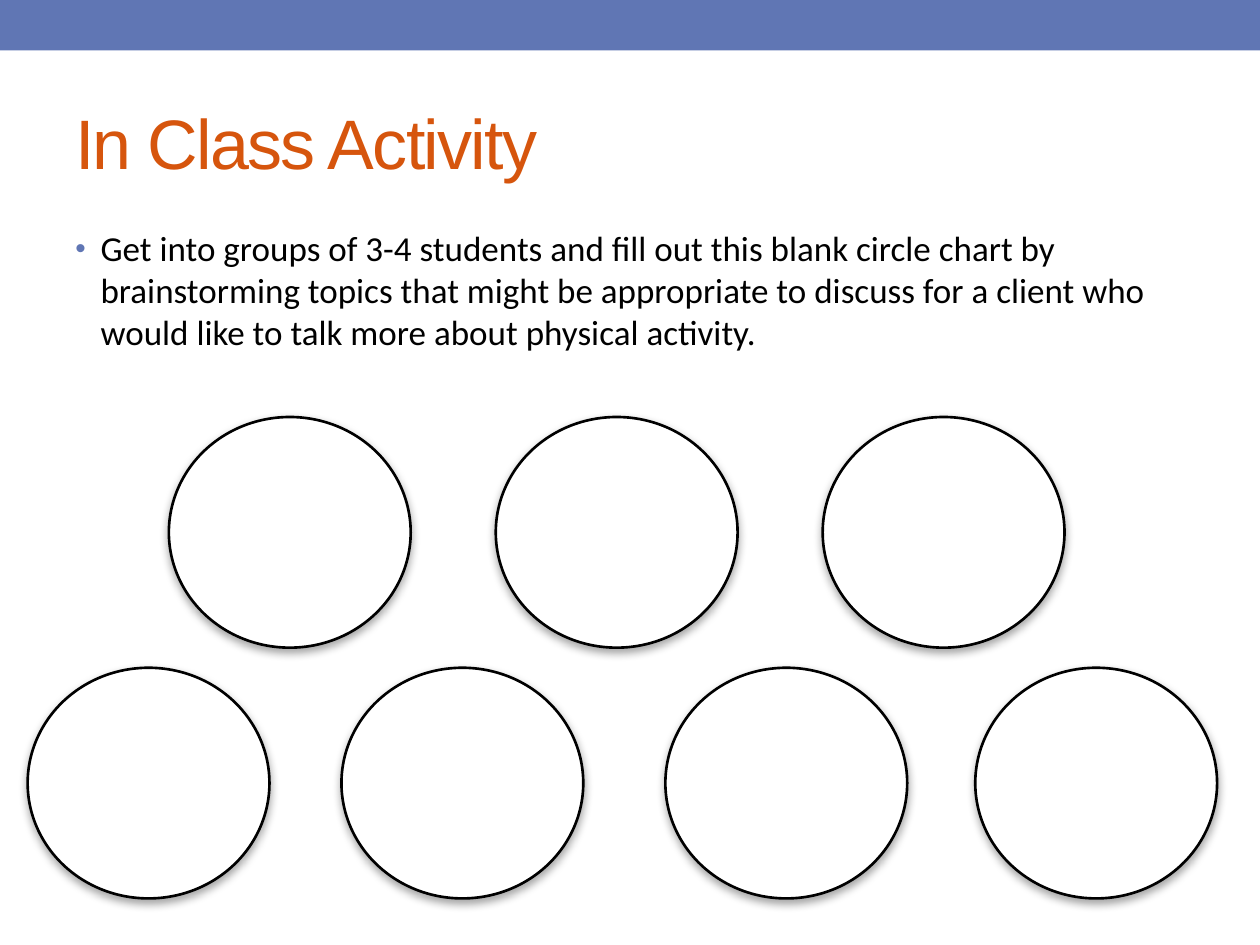
from lxml import etree
from pptx import Presentation
from pptx.dml.color import RGBColor
from pptx.enum.shapes import MSO_SHAPE
from pptx.enum.text import MSO_ANCHOR
from pptx.oxml.ns import qn
from pptx.util import Pt

RECTANGLE, OVAL = MSO_SHAPE.RECTANGLE, MSO_SHAPE.OVAL
TOP, MIDDLE = MSO_ANCHOR.TOP, MSO_ANCHOR.MIDDLE
COLORS = {"band": "6076B4", "title": "D6550D", "ink": "000000", "paper": "FFFFFF"}
CIRCLE_SIZE = (138.2, 131.8)
TOP_ROW = (238.3, [96.5 + 186.8 * column for column in range(3)])
BOTTOM_ROW = (381.6, [557.3, 380.2, 195.1, 15.8])


class ActivitySlide:
    """Holds the style and the current slide, and draws each kind of element."""

    def __init__(self, presentation):
        self.slide = presentation.slides.add_slide(presentation.slide_layouts[6])

    def color(self, name):
        return RGBColor.from_string(COLORS[name])

    def shape(self, kind, box, fill):
        shape = self.slide.shapes.add_shape(kind, *map(Pt, box))
        shape.shadow.inherit = False
        shape.fill.solid()
        shape.fill.fore_color.rgb = self.color(fill)
        shape.line.fill.background()
        return shape

    def circle(self, left, top):
        circle = self.shape(OVAL, (left, top, *CIRCLE_SIZE), "paper")
        circle.line.color.rgb = self.color("ink")
        circle.line.width = Pt(1.5)
        effects = circle._element.spPr.find(qn("a:effectLst"))
        shadow = etree.SubElement(
            effects, qn("a:outerShdw"), blurRad=str(Pt(5)), dist=str(Pt(2.1)),
            dir="5400000", rotWithShape="0")
        tint = etree.SubElement(shadow, qn("a:srgbClr"), val=COLORS["ink"])
        etree.SubElement(tint, qn("a:alpha"), val="35000")

    def text(self, box, text, font, size, color, anchor=TOP):
        frame = self.slide.shapes.add_textbox(*map(Pt, box)).text_frame
        frame.word_wrap = True
        frame.vertical_anchor = anchor
        paragraph = frame.paragraphs[0]
        paragraph.text = text
        paragraph.font.name = font
        paragraph.font.size = Pt(size)
        paragraph.font.color.rgb = self.color(color)
        return paragraph

    def title(self, box, text):
        paragraph = self.text(box, text, "Arial", 40, "title", MIDDLE)
        paragraph.runs[0].font._element.set("spc", "-100")

    def bullet(self, box, text):
        paragraph = self.text(box, text, "Calibri", 20, "ink")
        paragraph.space_after = Pt(10)
        properties = paragraph._element.get_or_add_pPr()
        properties.set("marL", str(Pt(14.4)))
        properties.set("indent", str(Pt(-14.4)))
        marker = etree.Element(qn("a:buClr"))
        etree.SubElement(marker, qn("a:srgbClr"), val=COLORS["band"])
        size = etree.Element(qn("a:buSzPct"), val="85000")
        typeface = etree.Element(qn("a:buFont"), typeface="Arial")
        character = etree.Element(qn("a:buChar"), char="•")
        position = list(properties).index(properties.find(qn("a:spcAft"))) + 1
        properties[position:position] = [marker, size, typeface, character]


def main():
    presentation = Presentation()
    presentation.slide_width, presentation.slide_height = Pt(720), Pt(540)
    activity = ActivitySlide(presentation)
    activity.shape(RECTANGLE, (0, 0, 720, 28.8), "band")
    activity.title((36, 41.8, 648, 77.8), "In Class Activity")
    activity.bullet(
        (36, 126, 648, 383.8),
        "Get into groups of 3-4 students and fill out this blank circle chart by "
        "brainstorming topics that might be appropriate to discuss for a client who "
        "would like to talk more about physical activity.")
    for top, lefts in (TOP_ROW, BOTTOM_ROW):
        for left in lefts:
            activity.circle(left, top)
    presentation.save("out.pptx")


if __name__ == "__main__":
    main()
